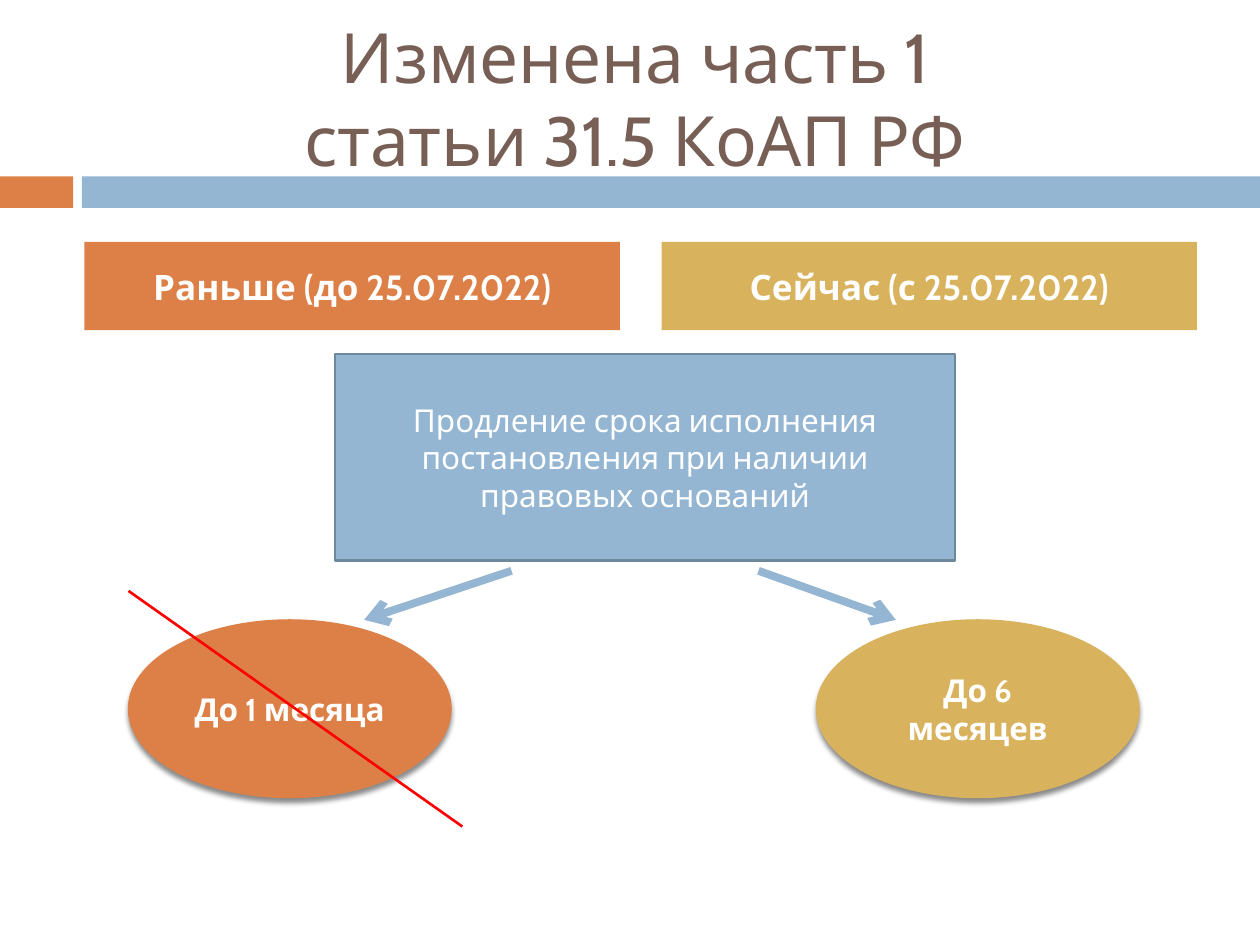
from dataclasses import dataclass

from lxml.etree import SubElement
from pptx import Presentation
from pptx.dml.color import RGBColor as Rgb
from pptx.enum.shapes import MSO_CONNECTOR as Link, MSO_SHAPE as Preset
from pptx.enum.text import MSO_ANCHOR as Anchor, PP_ALIGN as Align
from pptx.oxml.ns import qn
from pptx.util import Inches, Pt


@dataclass(frozen=True)
class Theme:
    """Colours, font and type sizes of the slide."""
    before: str = "DD8047"
    now: str = "D8B25C"
    accent: str = "94B6D2"
    accent_edge: str = "6D879B"
    title: str = "775F55"
    text: str = "FFFFFF"
    strike: str = "FF0000"
    shade: str = "000000"
    font: str = "Cabin"
    title_size: float = 39.6
    label_size: float = 20
    body_size: float = 18


@dataclass(frozen=True)
class Box:
    """An area on a grid of 100 columns and 75 rows."""
    left: float
    top: float
    width: float
    height: float

    def area(self, left, top, width, height):
        """Return an area placed relative to this one."""
        return Box(self.left + left, self.top + top, width, height)

    def halves(self, width):
        """Return the areas at the left and right edges."""
        return [self.area(left, 0, width, self.height)
                for left in (0, self.width - width)]

    def point(self, column, row):
        """Return a point of this area as slide lengths."""
        return grid(self.left + column), grid(self.top + row)

    def lengths(self):
        """Return left, top, width and height as slide lengths."""
        return [grid(n) for n in (self.left, self.top, self.width, self.height)]


THEME = Theme()


def grid(count):
    """Convert grid steps to a length."""
    return Inches(count / 10)


def apply(target, values):
    """Set every format value on the target."""
    for name, value in values.items():
        setattr(target, name, value)


def write(holder, lines, size, color=THEME.text, bold=False, before=0):
    """Write centred lines into a shape or text box."""
    frame = holder.text_frame
    apply(frame, {"word_wrap": True, "vertical_anchor": Anchor.MIDDLE})
    paragraph = frame.paragraphs[0]
    apply(paragraph, {"alignment": Align.CENTER, "space_before": Pt(before)})
    for index, line in enumerate(lines):
        if index:
            paragraph.add_line_break()
        run = paragraph.add_run()
        run.text = line
        apply(run.font, {"name": THEME.font, "size": Pt(size), "bold": bold})
        run.font.color.rgb = Rgb.from_string(color)


def block(slide, box, fill, preset=Preset.RECTANGLE, edge=None, weight=0):
    """Add a filled shape with an optional outline."""
    shape = slide.shapes.add_shape(preset, *box.lengths())
    shape.shadow.inherit = False
    shape.fill.solid()
    shape.fill.fore_color.rgb = Rgb.from_string(fill)
    if edge:
        shape.line.color.rgb = Rgb.from_string(edge)
        shape.line.width = Pt(weight)
    else:
        shape.line.fill.background()
    return shape


def drop_shadow(shape):
    """Give a shape a soft shadow below it."""
    effects = shape.element.spPr.find(qn("a:effectLst"))
    shadow = SubElement(effects, qn("a:outerShdw"), blurRad=str(Pt(3)),
                        dist=str(Pt(2.4)), dir="5400000", rotWithShape="0")
    color = SubElement(shadow, qn("a:srgbClr"), val=THEME.shade)
    SubElement(color, qn("a:alpha"), val="45000")


def stroke(slide, start, end, color, weight, arrow=False):
    """Draw a straight line, with an open arrowhead if wanted."""
    connector = slide.shapes.add_connector(Link.STRAIGHT, *start, *end)
    connector.line.color.rgb = Rgb.from_string(color)
    connector.line.width = Pt(weight)
    properties = connector.element.spPr
    if arrow:
        SubElement(properties.find(qn("a:ln")), qn("a:tailEnd"), type="arrow")
    SubElement(properties, qn("a:effectLst"))


def header(slide, box):
    """Place the title over a two-coloured band."""
    band_top, band_height, tab, gap = 14, 2.5, 5.8, 0.7
    rest = tab + gap
    block(slide, box.area(0, band_top, tab, band_height), THEME.before)
    block(slide, box.area(rest, band_top, box.width - rest, band_height), THEME.accent)
    title = slide.shapes.add_textbox(*box.area(tab, 3, 89.2, 9.5).lengths())
    write(title, ["Изменена часть 1", "статьи 31.5 КоАП РФ"],
          THEME.title_size, THEME.title)


def periods(slide, box):
    """Place the labels of the two periods side by side."""
    labels = [("Раньше (до 25.07.2022)", THEME.before),
              ("Сейчас (с 25.07.2022)", THEME.now)]
    for half, (label, fill) in zip(box.halves(42.5), labels):
        write(block(slide, half, fill), [label], THEME.label_size, bold=True, before=7)


def extension(slide, box):
    """Place the rule, its two terms and the strike through the old term."""
    rule = block(slide, box.area(16.4, 0, 49.2, 16.4), THEME.accent,
                 edge=THEME.accent_edge, weight=1.5)
    write(rule, ["Продление срока исполнения постановления при наличии "
                 "правовых оснований"], THEME.body_size)
    term_top, arrow_top = 21.1, 17.2
    terms = [("До 1 месяца", THEME.before, 30.4, 18.7),
             ("До 6 месяцев", THEME.now, 50, 60.9)]
    halves = box.area(0, term_top, box.width, 14.1).halves(25.6)
    for half, (term, fill, start, end) in zip(halves, terms):
        oval = block(slide, half, fill, Preset.OVAL, fill, 0.79)
        drop_shadow(oval)
        write(oval, [term], THEME.body_size, bold=True)
        stroke(slide, box.point(start, arrow_top), box.point(end, term_top),
               THEME.accent, 4.5, arrow=True)
    stroke(slide, box.point(0, 18.8), box.point(26.5, box.height), THEME.strike, 1.5)


def main():
    """Build the slide and save it."""
    deck = Presentation()
    apply(deck, {"slide_width": grid(100), "slide_height": grid(75)})
    slide = deck.slides.add_slide(deck.slide_layouts[6])
    header(slide, Box(0, 0, 100, 16.5))
    periods(slide, Box(6.7, 19.2, 88.3, 7))
    extension(slide, Box(10.2, 28.1, 80.2, 37.5))
    deck.save("out.pptx")


if __name__ == "__main__":
    main()
